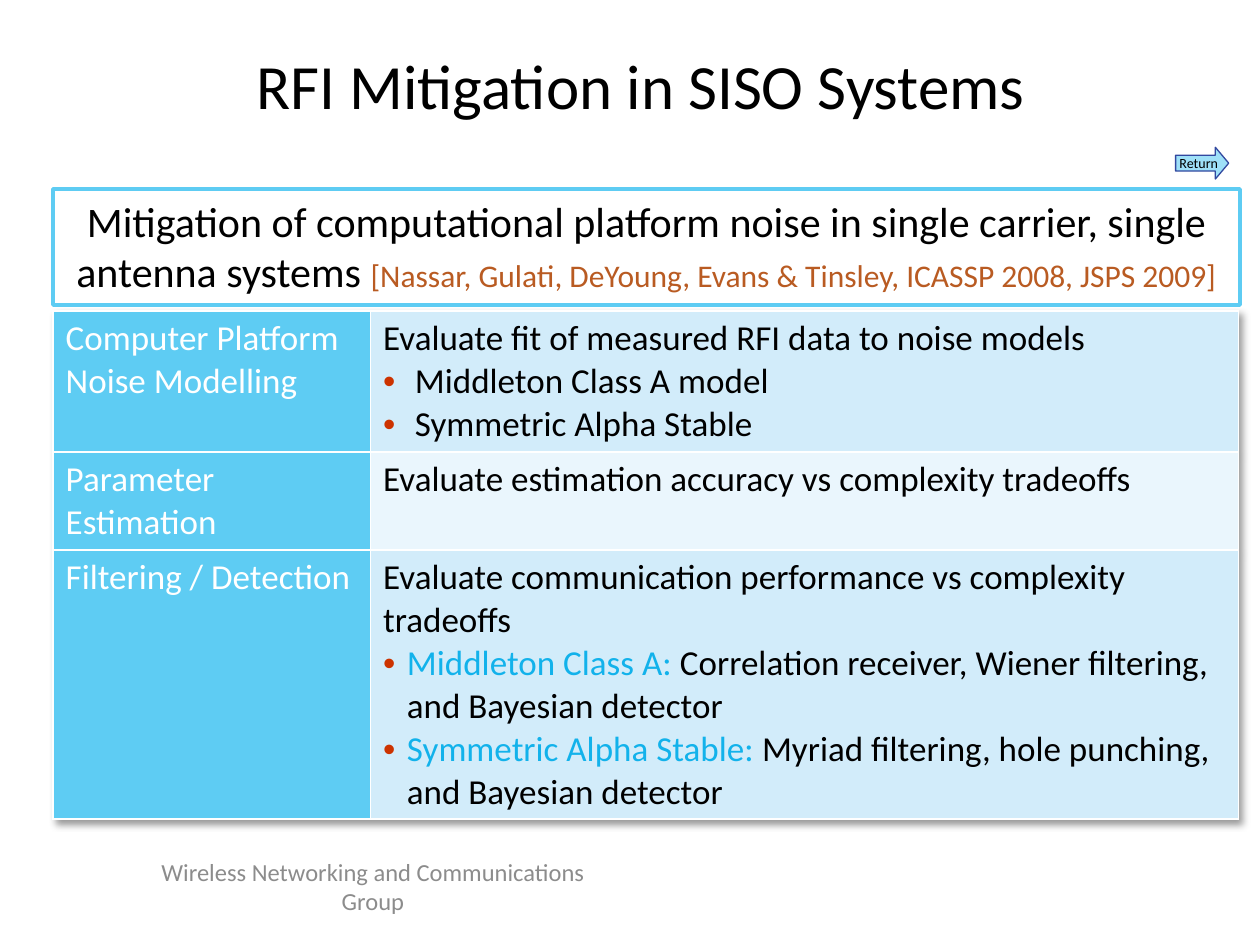
"""Build the slide on RFI mitigation in SISO systems."""
from lxml.etree import SubElement
from pptx import Presentation
from pptx.dml.color import RGBColor
from pptx.enum.shapes import MSO_SHAPE
from pptx.enum.text import MSO_ANCHOR, PP_ALIGN
from pptx.oxml import parse_xml
from pptx.oxml.ns import nsdecls, qn
from pptx.util import Cm, Pt

COLORS = {
    "black": "000000", "white": "FFFFFF", "gray": "8C8C8C",
    "sky": "5ECCF3", "pale": "D2ECFA", "paler": "EAF6FD",
    "accent": "12B2EB", "bullet": "CC3300", "citation": "B95B22",
    "arrow": "9EE0F8", "navy": "31489F",
}


def rgb(name):
    return RGBColor.from_string(COLORS[name])


def write(para, runs, size, align=PP_ALIGN.LEFT):
    para.alignment = align
    para.font.name = "Calibri"
    para.font.size = Pt(size)
    for text, color, *own_size in runs:
        span = para.add_run()
        span.text = text
        span.font.color.rgb = rgb(color)
        if own_size:
            span.font.size = Pt(own_size[0])


deck = Presentation()
deck.slide_width, deck.slide_height = Cm(25.4), Cm(19.05)
page = deck.slides.add_slide(deck.slide_layouts[6])

boxes = [
    (MSO_SHAPE.ROUNDED_RECTANGLE, (2.34, 17.35, 10.36, 1.02), None, None, MSO_ANCHOR.MIDDLE, 14,
     [("Wireless Networking and Communications Group", "gray")]),
    (MSO_SHAPE.RECTANGLE, (1.07, 3.81, 23.93, 2.34), "white", ("sky", 2), MSO_ANCHOR.TOP, 24,
     [("Mitigation of computational platform noise in single carrier, single antenna systems ", "black"),
      ("[Nassar, Gulati, DeYoung, Evans & Tinsley, ICASSP 2008, JSPS 2009]", "citation", 18)]),
    (MSO_SHAPE.RIGHT_ARROW, (23.7, 2.97, 1.07, 0.64), "arrow", ("navy", 0.75), MSO_ANCHOR.MIDDLE, 8,
     [("Return", "black")]),
]
for kind, place, fill, line, anchor, size, runs in boxes:
    box = page.shapes.add_shape(kind, *map(Cm, place))
    box.shadow.inherit = False
    if fill:
        box.fill.solid()
        box.fill.fore_color.rgb = rgb(fill)
    else:
        box.fill.background()
    if line:
        box.line.color.rgb = rgb(line[0])
        box.line.width = Pt(line[1])
    else:
        box.line.fill.background()
    if kind == MSO_SHAPE.RIGHT_ARROW:
        box.adjustments[1] = 0.42
    box.text_frame.word_wrap = kind != MSO_SHAPE.RIGHT_ARROW
    box.text_frame.vertical_anchor = anchor
    write(box.text_frame.paragraphs[0], runs, size, PP_ALIGN.CENTER)

title = page.shapes.add_textbox(Cm(1.07), Cm(0.64), Cm(23.7), Cm(2.11)).text_frame
title.word_wrap = True
title.vertical_anchor = MSO_ANCHOR.MIDDLE
write(title.paragraphs[0], [("RFI Mitigation in SISO Systems", "black")], 36, PP_ALIGN.CENTER)

rows = [
    (2.84, "pale", 0.64, "Computer Platform Noise Modelling",
     "Evaluate fit of measured RFI data to noise models",
     [[("Middleton Class A model", "black")],
      [("Symmetric Alpha Stable", "black")]]),
    (1.98, "paler", 0, "Parameter Estimation",
     "Evaluate estimation accuracy vs complexity tradeoffs", []),
    (5.42, "pale", 0.48, "Filtering / Detection",
     "Evaluate communication performance vs complexity tradeoffs",
     [[("Middleton Class A: ", "accent"),
       ("Correlation receiver, Wiener filtering, and Bayesian detector", "black")],
      [("Symmetric Alpha Stable: ", "accent"),
       ("Myriad filtering, hole punching, and Bayesian detector", "black")]]),
]
table = page.shapes.add_table(
    len(rows), 2, Cm(1.07), Cm(6.27), Cm(23.9), Cm(sum(row[0] for row in rows))).table
table.first_row = False
table.columns[0].width, table.columns[1].width = Cm(6.4), Cm(17.5)
table._tbl.tblPr.insert(0, parse_xml(
    f'<a:effectLst {nsdecls("a")}><a:outerShdw blurRad="50800" dist="38100" dir="2700000" '
    'algn="tl" rotWithShape="0"><a:srgbClr val="000000"><a:alpha val="40000"/></a:srgbClr>'
    '</a:outerShdw></a:effectLst>'))

for index, (height, tint, indent, topic, lead, points) in enumerate(rows):
    table.rows[index].height = Cm(height)
    contents = [("sky", [[(topic, "white")]]), (tint, [[(lead, "black")], *points])]
    for column, (fill, paragraphs) in enumerate(contents):
        cell = table.cell(index, column)
        for side in ("lnL", "lnR", "lnT", "lnB"):
            border = SubElement(cell._tc.get_or_add_tcPr(), qn(f"a:{side}"), w=str(Pt(1)))
            SubElement(SubElement(border, qn("a:solidFill")), qn("a:srgbClr"), val=COLORS["white"])
        cell.fill.solid()
        cell.fill.fore_color.rgb = rgb(fill)
        for number, runs in enumerate(paragraphs):
            frame = cell.text_frame
            para = frame.add_paragraph() if number else frame.paragraphs[0]
            if number:
                settings = para._p.get_or_add_pPr()
                settings.set("marL", str(Cm(indent)))
                settings.set("indent", str(-Cm(indent)))
                SubElement(SubElement(settings, qn("a:buClr")), qn("a:srgbClr"), val=COLORS["bullet"])
                SubElement(settings, qn("a:buFont"), typeface="Arial")
                SubElement(settings, qn("a:buChar"), char="•")
            write(para, runs, 20)

deck.save("out.pptx")
